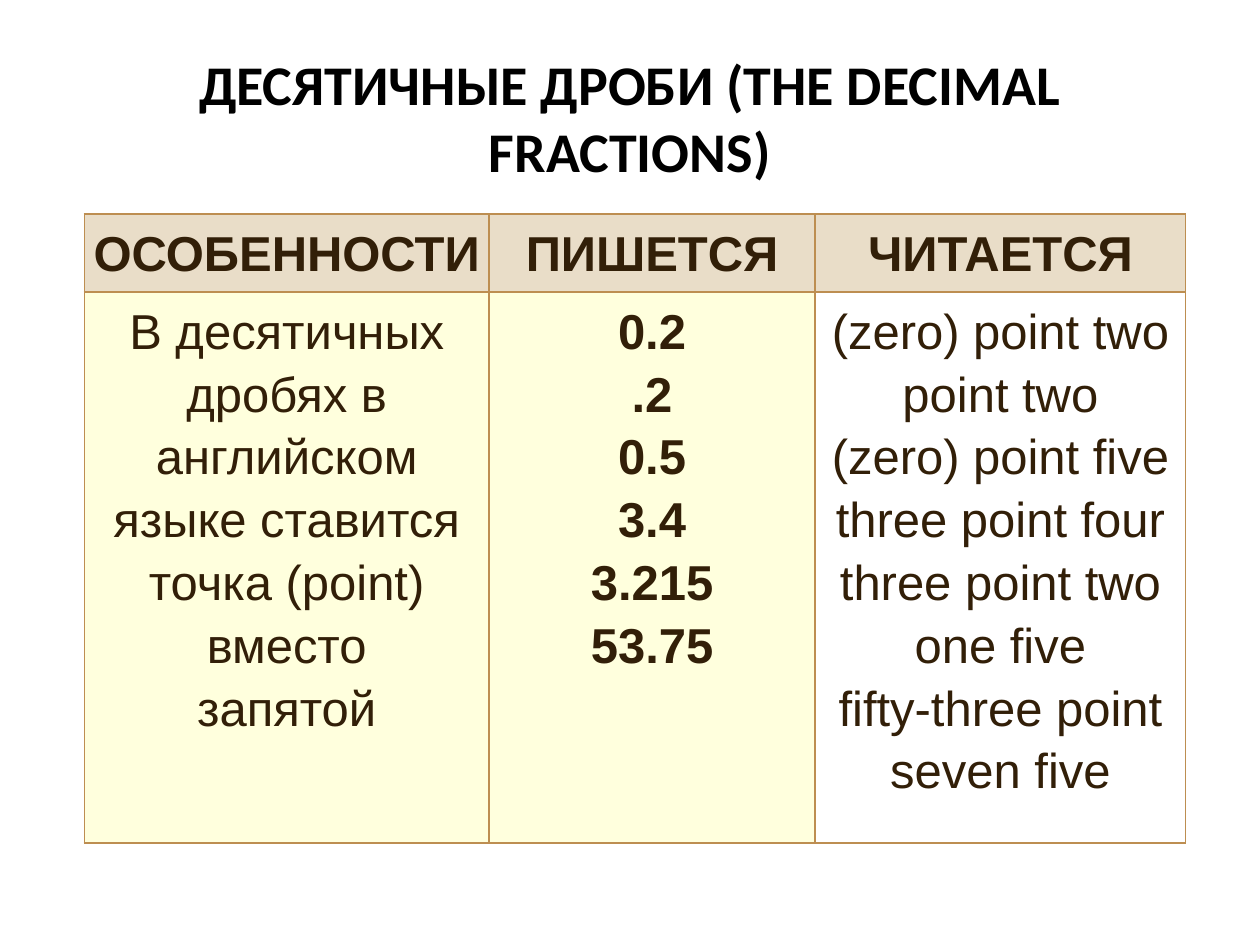
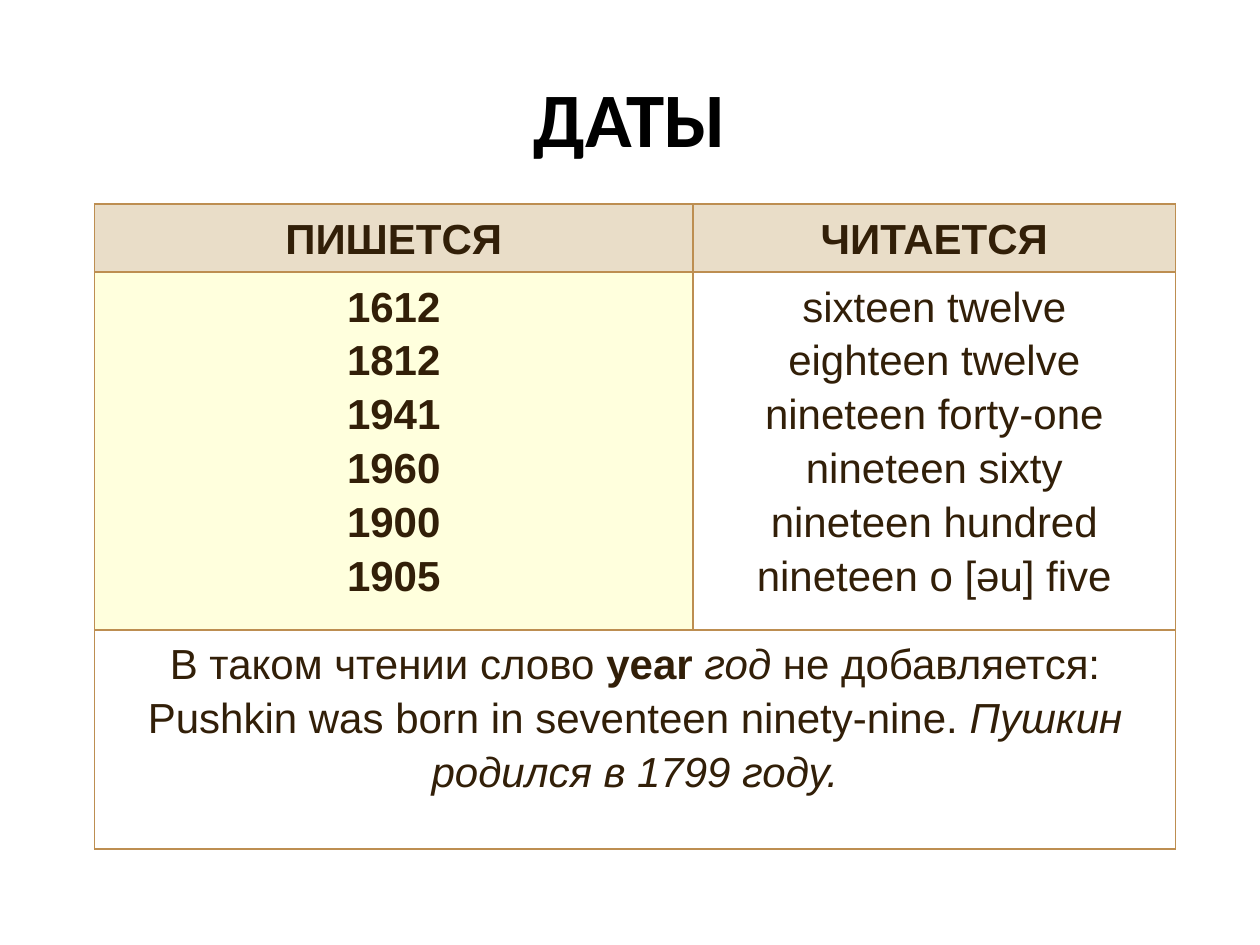
"""Builds two slides with tables on reading decimal fractions and dates in English."""
from lxml import etree
from pptx import Presentation
from pptx.dml.color import RGBColor
from pptx.enum.text import MSO_ANCHOR as Anchor, PP_ALIGN as Align
from pptx.oxml.ns import qn
from pptx.util import Inches, Pt

BLACK, BROWN, BORDER = "000000", "321F08", "BD8E51"
SAND, CREAM, WHITE = "E9DDC8", "FFFFDD", "FFFFFF"
TITLE_BOX = (0.5, 0.3, 9, 1.25)
CELL_MARGIN = 0.04

FRACTION_RULE = [
    "В десятичных дробях в английском языке ставится точка (point) вместо",
    "запятой",
]
FRACTIONS = [
    ("0.2", "(zero) point two"),
    (".2", "point two"),
    ("0.5", "(zero) point five"),
    ("3.4", "three point four"),
    ("3.215", "three point two one five"),
    ("53.75", "fifty-three point seven five"),
]
YEARS = [
    ("1612", "sixteen twelve"),
    ("1812", "eighteen twelve"),
    ("1941", "nineteen forty-one"),
    ("1960", "nineteen sixty"),
    ("1900", "nineteen hundred"),
    ("1905", "nineteen o [əu] five"),
]
YEAR_NOTE = [
    [("В таком чтении слово ", ""), ("year ", "b"), ("год", "i"), (" не добавляется:", "")],
    [("Pushkin was born in seventeen ninety-nine. ", ""), ("Пушкин родился в 1799 году.", "i")],
]


def columns_of(pairs):
    """Return the written forms in bold and the spoken forms in plain type."""
    written, spoken = zip(*pairs)
    return [[[(text, "b")] for text in written], [[(text, "")] for text in spoken]]


SLIDES = [
    dict(
        title="ДЕСЯТИЧНЫЕ ДРОБИ (THE DECIMAL FRACTIONS)", title_size=32, size=28,
        box=(0.67, 1.7, 8.74, 5), columns=(3.21, 2.59, 2.94), rows=(0.58, 4.07),
        headings=["ОСОБЕННОСТИ", "ПИШЕТСЯ", "ЧИТАЕТСЯ"],
        body=[[[(text, "")] for text in FRACTION_RULE], *columns_of(FRACTIONS)],
    ),
    dict(
        title="ДАТЫ", title_size=44, size=24,
        box=(0.75, 1.62, 8.58, 5.13), columns=(4.75, 3.83), rows=(0.51, 2.65, 1.74),
        headings=["ПИШЕТСЯ", "ЧИТАЕТСЯ"], body=columns_of(YEARS), note=YEAR_NOTE,
    ),
]


def color(value):
    """Turn a hex string into a colour."""
    return RGBColor.from_string(value)


def write(frame, paragraphs, size, font="Arial", ink=BROWN, spacing=1.0):
    """Fill a text frame with centred paragraphs of (text, style) runs."""
    for index, runs in enumerate(paragraphs):
        paragraph = frame.add_paragraph() if index else frame.paragraphs[0]
        paragraph.alignment = Align.CENTER
        paragraph.line_spacing = spacing
        for text, style in runs:
            run = paragraph.add_run()
            run.text = text
            run.font.name, run.font.size = font, Pt(size)
            run.font.bold, run.font.italic = "b" in style, "i" in style
            run.font.color.rgb = color(ink)


def add_borders(cell):
    """Draw a thin line on all four sides of a cell."""
    properties = cell._tc.get_or_add_tcPr()
    for index, side in enumerate(("a:lnL", "a:lnR", "a:lnT", "a:lnB")):
        line = etree.Element(qn(side), w=str(Pt(1)))
        fill = etree.SubElement(line, qn("a:solidFill"))
        etree.SubElement(fill, qn("a:srgbClr"), val=BORDER)
        properties.insert(index, line)


def fill_cell(cell, paragraphs, size, fill):
    """Write and colour one table cell."""
    write(cell.text_frame, paragraphs, size, spacing=1.15)
    cell.fill.solid()
    cell.fill.fore_color.rgb = color(fill)


def add_title(slide, text, size):
    """Add the centred bold title."""
    frame = slide.shapes.add_textbox(*map(Inches, TITLE_BOX)).text_frame
    frame.word_wrap = True
    frame.vertical_anchor = Anchor.MIDDLE
    write(frame, [[(text, "b")]], size, font="Calibri", ink=BLACK)


def add_reading_table(slide, box, columns, rows, headings, body, size, note=None):
    """Add a table with headings, one body row and an optional full-width note."""
    graphic = slide.shapes.add_table(len(rows), len(columns), *map(Inches, box))
    table = graphic.table
    for column, width in zip(table.columns, columns):
        column.width = Inches(width)
    for row, height in zip(table.rows, rows):
        row.height = Inches(height)
    graphic.height = Inches(box[3])
    for cell in table.iter_cells():
        cell.margin_left = cell.margin_right = Inches(CELL_MARGIN)
        cell.margin_top = cell.margin_bottom = Inches(CELL_MARGIN)
        add_borders(cell)

    last = len(columns) - 1
    for index, (heading, paragraphs) in enumerate(zip(headings, body)):
        fill_cell(table.cell(0, index), [[(heading, "b")]], size, SAND)
        fill_cell(table.cell(1, index), paragraphs, size, WHITE if index == last else CREAM)
    if note:
        table.cell(2, 0).merge(table.cell(2, last))
        fill_cell(table.cell(2, 0), note, size, WHITE)


def main():
    """Build and save the presentation."""
    presentation = Presentation()
    presentation.slide_width, presentation.slide_height = Inches(10), Inches(7.5)
    for content in SLIDES:
        slide = presentation.slides.add_slide(presentation.slide_layouts[6])
        table = dict(content)
        add_title(slide, table.pop("title"), table.pop("title_size"))
        add_reading_table(slide, **table)
    presentation.save("out.pptx")


if __name__ == "__main__":
    main()
